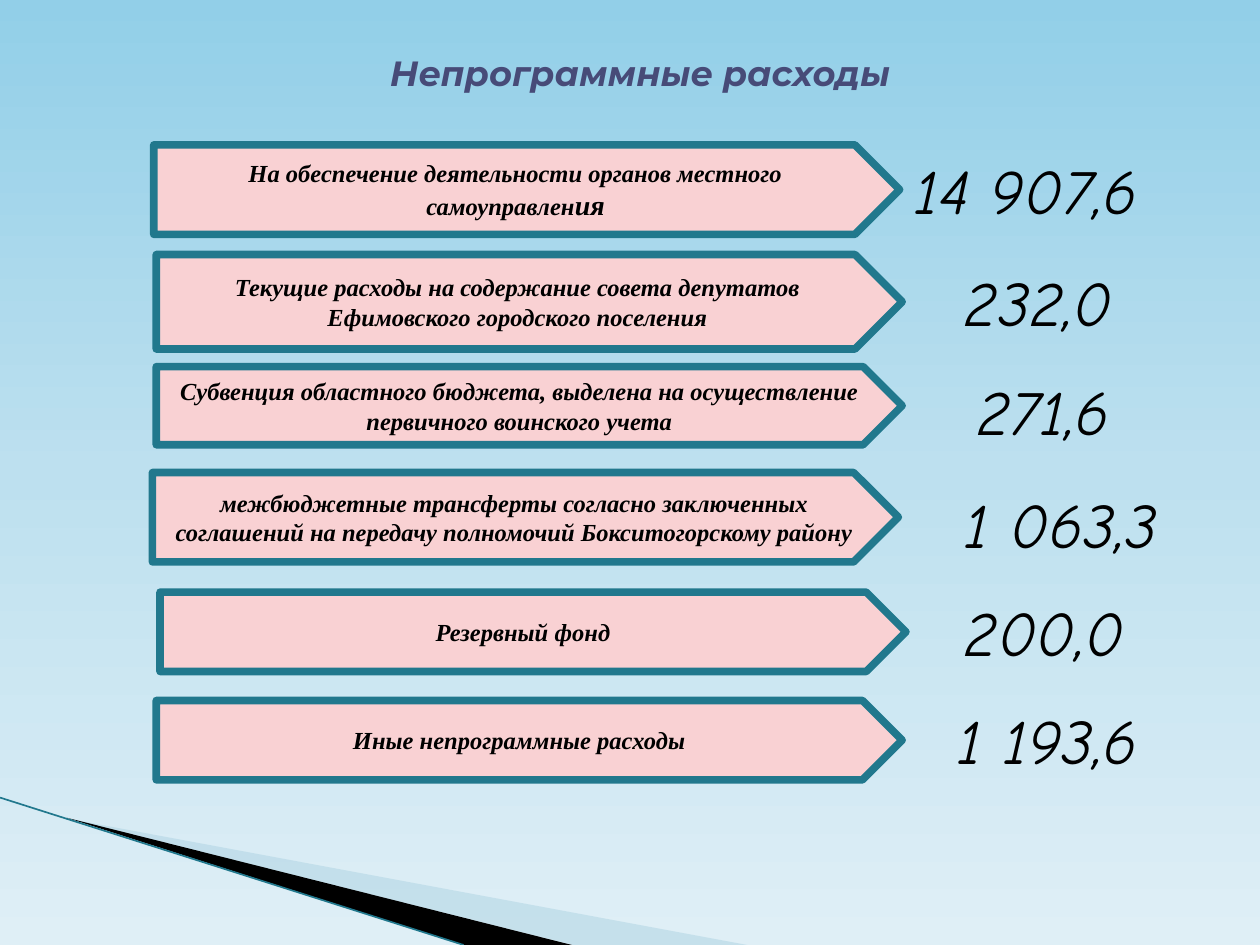
import copy

import pptx
import pptx.dml.color
import pptx.enum.shapes
import pptx.enum.text
import pptx.oxml
import pptx.oxml.ns
import pptx.util

COLUMNS, ROWS = 100, 75
CELL = pptx.util.Inches(0.1)
SERIF = "Times New Roman"
ARROW_WIDTH = 59.2
AMOUNT_HEIGHT = 7.1

# Arrow left, top, height; label; amount left, top, width; amount
EXPENSES = [
    (12.2, 11.5, 7.1, [("На обеспечение деятельности органов местного самоуправлен", 14), ("ия", 16)],
     71.6, 11.5, 23.7, "14 907,6"),
    (12.4, 20.2, 7.5, [("Текущие расходы на содержание совета депутатов Ефимовского городского поселения", 14)],
     75.6, 20.4, 17, "232,0"),
    (12.4, 29.1, 6.2, [("Субвенция областного бюджета, выделена на осуществление первичного воинского учета", 14)],
     76.6, 29.1, 17, "271,6"),
    (12.1, 37.5, 7.1, [("межбюджетные трансферты согласно заключенных соглашений "
                        "на передачу полномочий Бокситогорскому району", 14)],
     75.6, 38, 22, "1 063,3"),
    (12.7, 47, 6.3, [("Резервный фонд", 14)], 75.6, 46.6, 19.7, "200,0"),
    (12.4, 55.6, 6.3, [("Иные непрограммные расходы", 14)], 75, 55.2, 22, "1 193,6"),
]


def color(code):
    return pptx.dml.color.RGBColor.from_string(code)


def grid(*lengths):
    """Turn grid cells into EMU."""
    return [round(length * CELL) for length in lengths]


def paint_background(page):
    fill = page.background.fill
    fill.gradient()
    fill.gradient_angle = 270
    stop_list = page.element.find(".//" + pptx.oxml.ns.qn("a:gsLst"))
    stop_list.append(copy.deepcopy(stop_list[0]))
    stops = [(0, "92CFE8"), (0.5, "BDE0EF"), (1, "DFEFF6")]
    for stop, (position, code) in zip(fill.gradient_stops, stops):
        stop.position = position
        stop.color.rgb = color(code)


def add_wedge(page, points, code, opacity=100):
    tenths = [(round(x * 10), round(y * 10)) for x, y in points]
    builder = page.shapes.build_freeform(*tenths[0], scale=CELL / 10)
    builder.add_line_segments(tenths[1:], close=True)
    wedge = builder.convert_to_shape()
    wedge.shadow.inherit = False
    wedge.fill.solid()
    wedge.fill.fore_color.rgb = color(code)
    wedge.line.fill.background()
    if opacity < 100:
        tint = wedge.element.spPr.find(".//" + pptx.oxml.ns.qn("a:srgbClr"))
        alpha = pptx.oxml.parse_xml(f'<a:alpha {pptx.oxml.ns.nsdecls("a")} val="{opacity * 1000}"/>')
        tint.append(alpha)


def add_edge(page, start, end):
    edge = page.shapes.add_connector(
        pptx.enum.shapes.MSO_CONNECTOR.STRAIGHT, *grid(*start, *end))
    edge.line.color.rgb = color("21788D")
    edge.line.width = pptx.util.Pt(0.95)
    edge.element.spPr.append(
        pptx.oxml.parse_xml(f'<a:effectLst {pptx.oxml.ns.nsdecls("a")}/>'))


def style_font(para, family, code="000000", size=None, bold=False):
    font = para.font
    font.name, font.bold, font.italic = family, bold, True
    font.color.rgb = color(code)
    if size:
        font.size = pptx.util.Pt(size)


def add_text(page, place, text, family, size, code="000000", bold=False, centred=False):
    box = page.shapes.add_textbox(*grid(*place))
    box.text_frame.word_wrap = True
    para = box.text_frame.paragraphs[0]
    para.text = text
    if centred:
        para.alignment = pptx.enum.text.PP_ALIGN.CENTER
    style_font(para, family, code, size, bold)


def add_arrow(page, place, label):
    arrow = page.shapes.add_shape(pptx.enum.shapes.MSO_SHAPE.PENTAGON, *grid(*place))
    arrow.shadow.inherit = False
    arrow.fill.solid()
    arrow.fill.fore_color.rgb = color("F9D1D3")
    arrow.line.color.rgb = color("21788D")
    arrow.line.width = pptx.util.Pt(4.33)
    frame = arrow.text_frame
    frame.word_wrap = True
    frame.vertical_anchor = pptx.enum.text.MSO_ANCHOR.MIDDLE
    para = frame.paragraphs[0]
    para.alignment = pptx.enum.text.PP_ALIGN.CENTER
    style_font(para, SERIF, bold=True)
    for text, size in label:
        span = para.add_run()
        span.text = text
        span.font.size = pptx.util.Pt(size)


def main():
    deck = pptx.Presentation()
    deck.slide_width, deck.slide_height = grid(COLUMNS, ROWS)
    page = deck.slides.add_slide(deck.slide_layouts[6])
    paint_background(page)
    add_wedge(page, [(5.5, 65), (59.3, ROWS), (45.5, ROWS)], "A0CBDC", opacity=40)
    add_wedge(page, [(5.3, 64.9), (45.4, ROWS), (36.8, ROWS)], "000000")
    add_edge(page, (0, 63.3), (36.8, ROWS))

    add_text(page, (7.9, 3.6, 85.8, 4.4), "Непрограммные расходы",
             "Montserrat", 20, "474B78", bold=True, centred=True)
    for left, top, height, label, amount_left, amount_top, amount_width, amount in EXPENSES:
        add_arrow(page, (left, top, ARROW_WIDTH, height), label)
        add_text(page, (amount_left, amount_top, amount_width, AMOUNT_HEIGHT),
                 amount, "Comic Neue", 36)
    deck.save("out.pptx")


if __name__ == "__main__":
    main()
